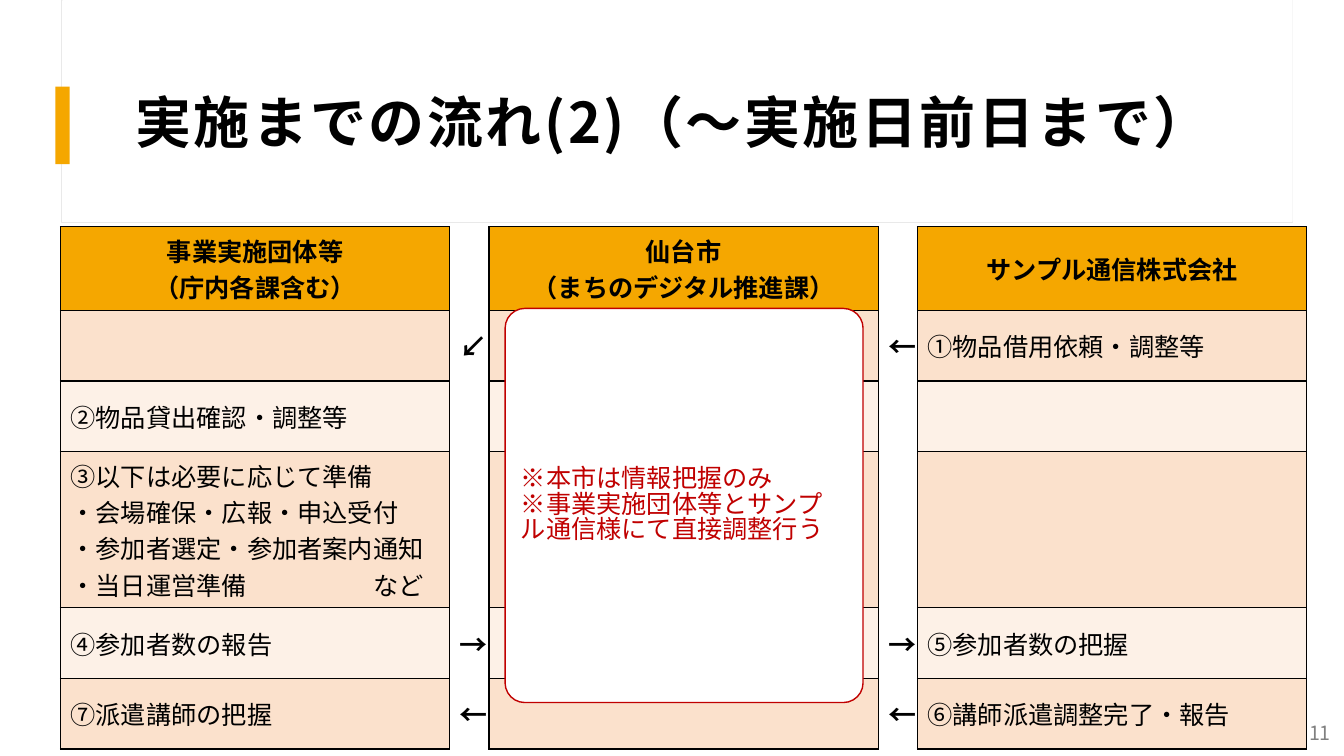
from lxml.etree import SubElement
from pptx import Presentation
from pptx.dml.color import RGBColor
from pptx.enum.shapes import MSO_SHAPE as Shape
from pptx.enum.text import MSO_ANCHOR as Anchor, PP_ALIGN as Align
from pptx.oxml.ns import qn
from pptx.util import Inches, Pt

TITLE = "実施までの流れ(2)（～実施日前日まで）"
PAGE = "11"
NOTES = ["※本市は情報把握のみ", "※事業実施団体等とサンプル通信様にて直接調整行う"]
PARTIES = [
    ["事業実施団体等", "（庁内各課含む）"],
    ["仙台市", "（まちのデジタル推進課）"],
    ["サンプル通信株式会社"],
]
PREPARATION = [
    "③以下は必要に応じて準備",
    "・会場確保・広報・申込受付",
    "・参加者選定・参加者案内通知",
    "・当日運営準備\tなど",
]
STEPS = [
    ([], "↙", [], "←", ["①物品借用依頼・調整等"]),
    (["②物品貸出確認・調整等"], "", [], "", []),
    (PREPARATION, "", [], "", []),
    (["④参加者数の報告"], "→", [], "→", ["⑤参加者数の把握"]),
    (["⑦派遣講師の把握"], "←", [], "←", ["⑥講師派遣調整完了・報告"]),
]

FONT = "Noto Sans CJK JP"
BLACK = RGBColor(0, 0, 0)
WHITE = RGBColor(0xFF, 0xFF, 0xFF)
AMBER = RGBColor(0xF5, 0xA7, 0x00)
PEACH = RGBColor(0xFB, 0xE1, 0xCC)
CREAM = RGBColor(0xFD, 0xF1, 0xE7)
RED = RGBColor(0xC0, 0x00, 0x00)
GRAY = RGBColor(0x80, 0x80, 0x80)
PALE = RGBColor(0xE9, 0xE9, 0xE9)

PARTY_WIDTH, ARROW_WIDTH = 3.86, 0.39
HEADER_HEIGHT, STEP_HEIGHT, PREPARATION_HEIGHT = 0.83, 0.7, 1.55
TAB_STOP = 3.0


def write(frame, lines, size=18, color=BLACK, bold=False, align=Align.LEFT,
          spacing=None, tracking=None):
    for index, line in enumerate(lines):
        paragraph = frame.paragraphs[0] if index == 0 else frame.add_paragraph()
        paragraph.alignment = align
        if spacing:
            paragraph.line_spacing = spacing
        if "\t" in line:
            tabs = SubElement(paragraph._p.get_or_add_pPr(), qn("a:tabLst"))
            SubElement(tabs, qn("a:tab"), pos=str(Inches(TAB_STOP)), algn="l")
        run = paragraph.add_run()
        run.text = line
        run.font.size = Pt(size)
        run.font.bold = bold
        run.font.color.rgb = color
        run.font.name = FONT
        properties = run.font._element
        SubElement(properties, qn("a:ea"), typeface=FONT)
        if tracking:
            properties.set("spc", str(int(tracking * 100)))


def add_panel(slide, kind, box, fill, line=None, width=1):
    panel = slide.shapes.add_shape(kind, *map(Inches, box))
    panel.shadow.inherit = False
    panel.fill.solid()
    panel.fill.fore_color.rgb = fill
    if line is None:
        panel.line.fill.background()
    else:
        panel.line.color.rgb = line
        panel.line.width = Pt(width)
    return panel


def add_label(slide, box, insets):
    frame = slide.shapes.add_textbox(*map(Inches, box)).text_frame
    frame.word_wrap = True
    frame.vertical_anchor = Anchor.MIDDLE
    (frame.margin_left, frame.margin_top,
     frame.margin_right, frame.margin_bottom) = map(Inches, insets)
    return frame


def set_borders(cell, sides):
    properties = cell._tc.get_or_add_tcPr()
    for side in "LRTB":
        border = SubElement(properties, qn(f"a:ln{side}"), w=str(Pt(1)))
        if side in sides:
            paint = SubElement(border, qn("a:solidFill"))
            SubElement(paint, qn("a:srgbClr"), val=str(BLACK))
        else:
            SubElement(border, qn("a:noFill"))


def add_flow(slide):
    header = (PARTIES[0], "", PARTIES[1], "", PARTIES[2])
    rows = [header, *STEPS]
    widths = [ARROW_WIDTH if column % 2 else PARTY_WIDTH for column in range(5)]
    heights = [HEADER_HEIGHT] + [
        PREPARATION_HEIGHT if step[0] is PREPARATION else STEP_HEIGHT for step in STEPS
    ]
    flow = slide.shapes.add_table(
        len(rows), len(widths), Inches(0.6), Inches(2.25),
        Inches(sum(widths)), Inches(sum(heights))).table
    flow.first_row = False
    flow.horz_banding = False
    for column, width in zip(flow.columns, widths):
        column.width = Inches(width)
    for row, height in zip(flow.rows, heights):
        row.height = Inches(height)
    for r, row in enumerate(rows):
        band = AMBER if r == 0 else (PEACH if r % 2 else CREAM)
        for c, content in enumerate(row):
            cell = flow.cell(r, c)
            cell.vertical_anchor = Anchor.MIDDLE
            if c % 2:
                set_borders(cell, "LR")
                cell.fill.background()
                if content:
                    write(cell.text_frame, [content], size=20, bold=True,
                          align=Align.CENTER)
            else:
                set_borders(cell, "LRTB")
                cell.fill.solid()
                cell.fill.fore_color.rgb = band
                write(cell.text_frame, content, bold=r == 0,
                      align=Align.LEFT if r else Align.CENTER)


def main():
    deck = Presentation()
    deck.slide_width, deck.slide_height = Inches(13.33), Inches(7.5)
    slide = deck.slides.add_slide(deck.slide_layouts[6])

    add_panel(slide, Shape.RECTANGLE, (0.61, 0, 12.21, 2.21), WHITE, PALE, 0.75)
    add_panel(slide, Shape.RECTANGLE, (0.62, 0, 12.2, 2.2), WHITE)
    add_panel(slide, Shape.RECTANGLE, (0.55, 0.86, 0.14, 0.77), AMBER)
    heading = add_label(slide, (1.22, 0.6, 11.12, 1.29), (0.12, 0.12, 0.12, 0.1))
    write(heading, [TITLE], size=40, bold=True, spacing=0.86, tracking=1.8)

    add_flow(slide)

    notice = add_panel(slide, Shape.ROUNDED_RECTANGLE, (5.01, 3.06, 3.55, 3.91), WHITE, RED)
    notice.adjustments[0] = 0.055
    notice.text_frame.word_wrap = True
    notice.text_frame.vertical_anchor = Anchor.MIDDLE
    write(notice.text_frame, NOTES, color=RED, spacing=0.84)

    page = add_label(slide, (11.9, 7.13, 1.3, 0.28), (0, 0, 0, 0))
    write(page, [PAGE], size=14, color=GRAY, align=Align.RIGHT)
    deck.save("out.pptx")


if __name__ == "__main__":
    main()
